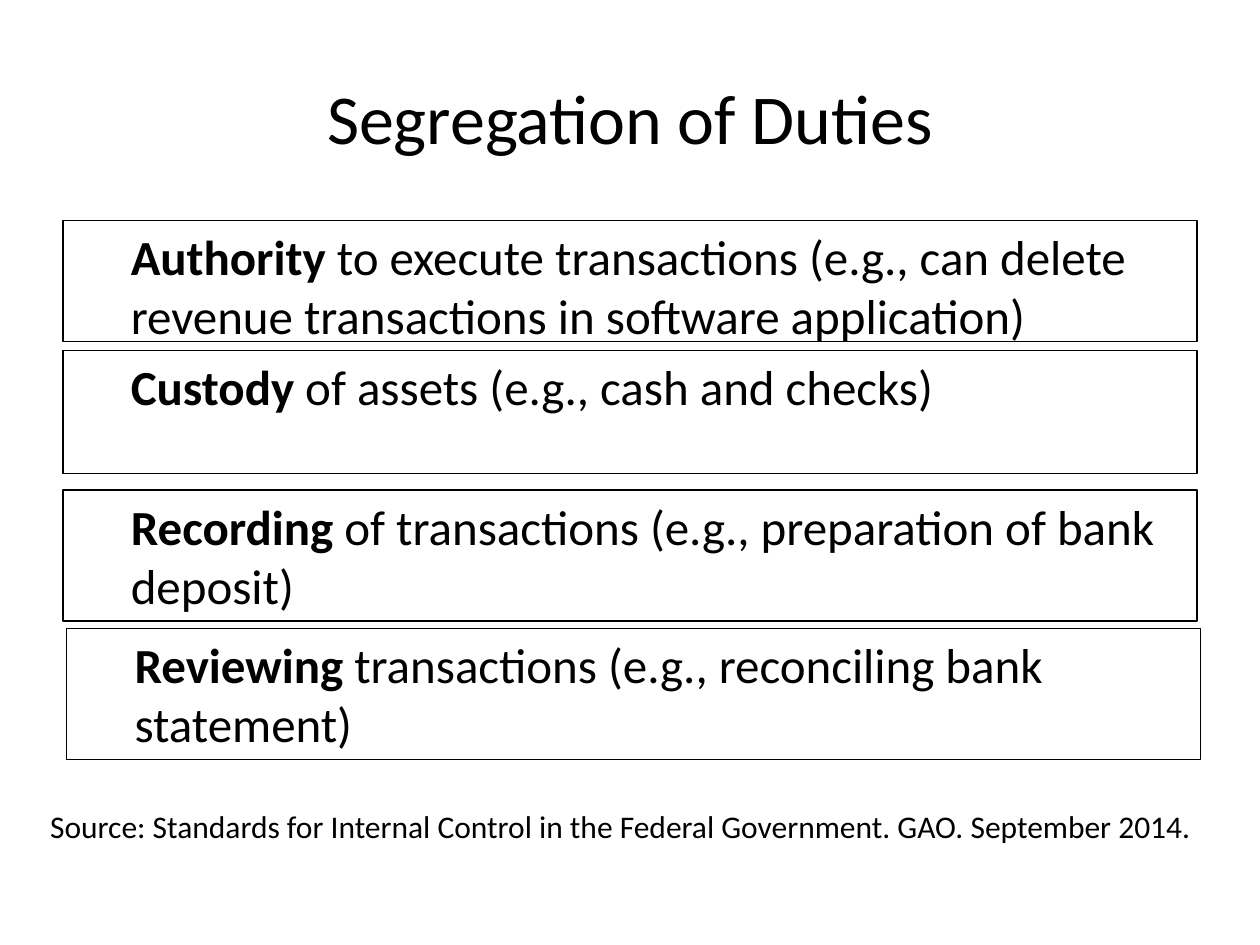
from pptx import Presentation
from pptx.dml.color import RGBColor
from pptx.enum.shapes import MSO_SHAPE
from pptx.enum.text import MSO_ANCHOR, PP_ALIGN
from pptx.util import Emu, Pt

EMU_PER_PX = 9144
DUTIES = [
    ((50, 175, 900, 96), "Authority",
     " to execute transactions (e.g., can delete revenue transactions in software application)"),
    ((50, 278, 900, 98), "Custody", " of assets (e.g., cash and checks)"),
    ((50, 389, 900, 104), "Recording", " of transactions (e.g., preparation of bank deposit)"),
    ((53, 499, 900, 104), "Reviewing", " transactions (e.g., reconciling bank statement)"),
]


def px(length):
    return Emu(length * EMU_PER_PX)


def color(value):
    return RGBColor.from_string(value)


class SlideBuilder:
    font_name = "Calibri"
    ink = "000000"

    def __init__(self, slide):
        self.slide = slide

    def add_run(self, paragraph, text, size, bold=False):
        run = paragraph.add_run()
        run.text = text
        run.font.name = self.font_name
        run.font.size = Pt(size)
        run.font.bold = bold
        run.font.color.rgb = color(self.ink)

    def title(self, box, text):
        shape = self.slide.shapes.title
        shape.left, shape.top, shape.width, shape.height = map(px, box)
        shape.text_frame.vertical_anchor = MSO_ANCHOR.MIDDLE
        paragraph = shape.text_frame.paragraphs[0]
        paragraph.alignment = PP_ALIGN.CENTER
        self.add_run(paragraph, text, 40)

    def duty(self, box, name, description):
        shape = self.slide.shapes.add_shape(MSO_SHAPE.RECTANGLE, *map(px, box))
        shape.shadow.inherit = False
        shape.fill.background()
        shape.line.color.rgb = color(self.ink)
        shape.line.width = Pt(0.75)
        frame = shape.text_frame
        frame.word_wrap = True
        frame.vertical_anchor = MSO_ANCHOR.TOP
        paragraph = frame.paragraphs[0]
        paragraph.alignment = PP_ALIGN.LEFT
        properties = paragraph._p.get_or_add_pPr()
        properties.set("marL", str(px(44)))
        properties.set("indent", "0")
        self.add_run(paragraph, name, 28, bold=True)
        self.add_run(paragraph, description, 28)

    def note(self, box, text):
        shape = self.slide.shapes.add_textbox(*map(px, box))
        shape.text_frame.word_wrap = True
        self.add_run(shape.text_frame.paragraphs[0], text, 18)


def main():
    presentation = Presentation()
    presentation.slide_width, presentation.slide_height = px(1000), px(750)
    builder = SlideBuilder(presentation.slides.add_slide(presentation.slide_layouts[5]))
    builder.title((50, 30, 900, 125), "Segregation of Duties")
    for box, name, description in DUTIES:
        builder.duty(box, name, description)
    builder.note((30, 636, 946, 40),
                 "Source: Standards for Internal Control in the Federal Government. GAO. September 2014.")
    presentation.save("out.pptx")


if __name__ == "__main__":
    main()
